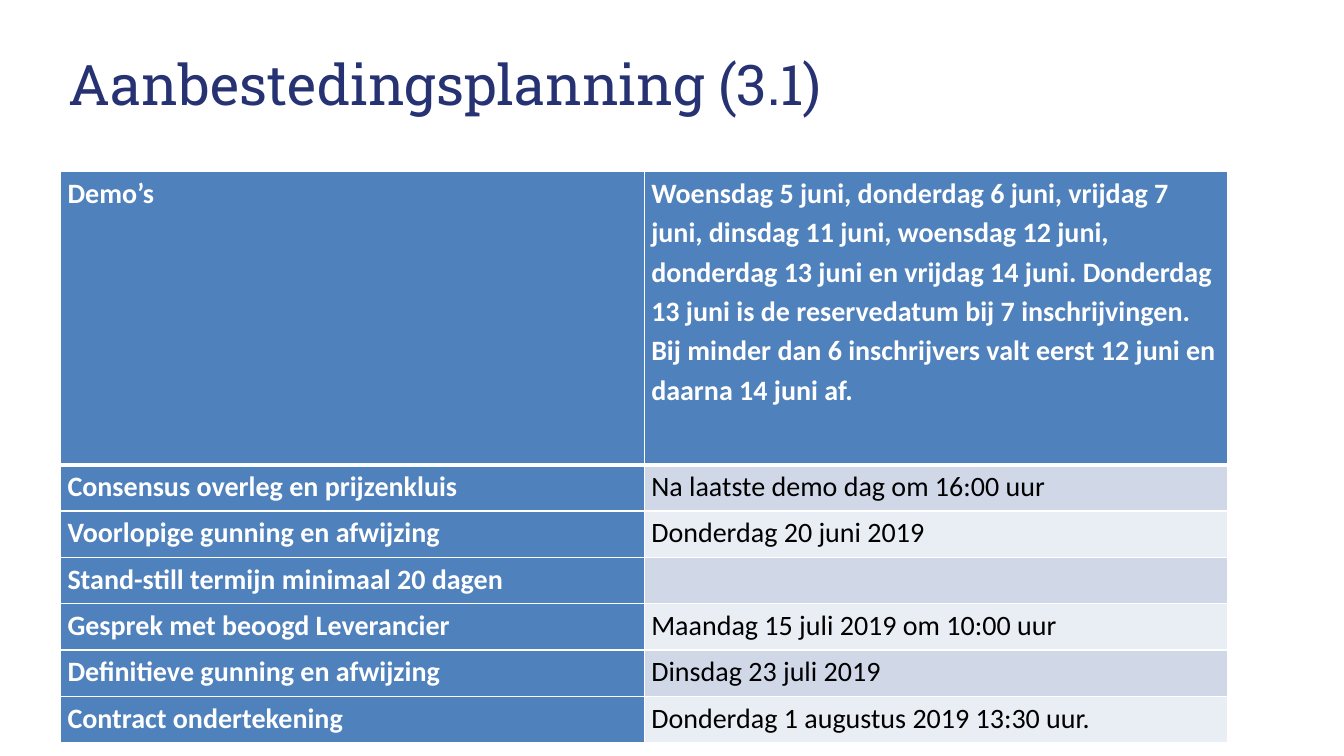
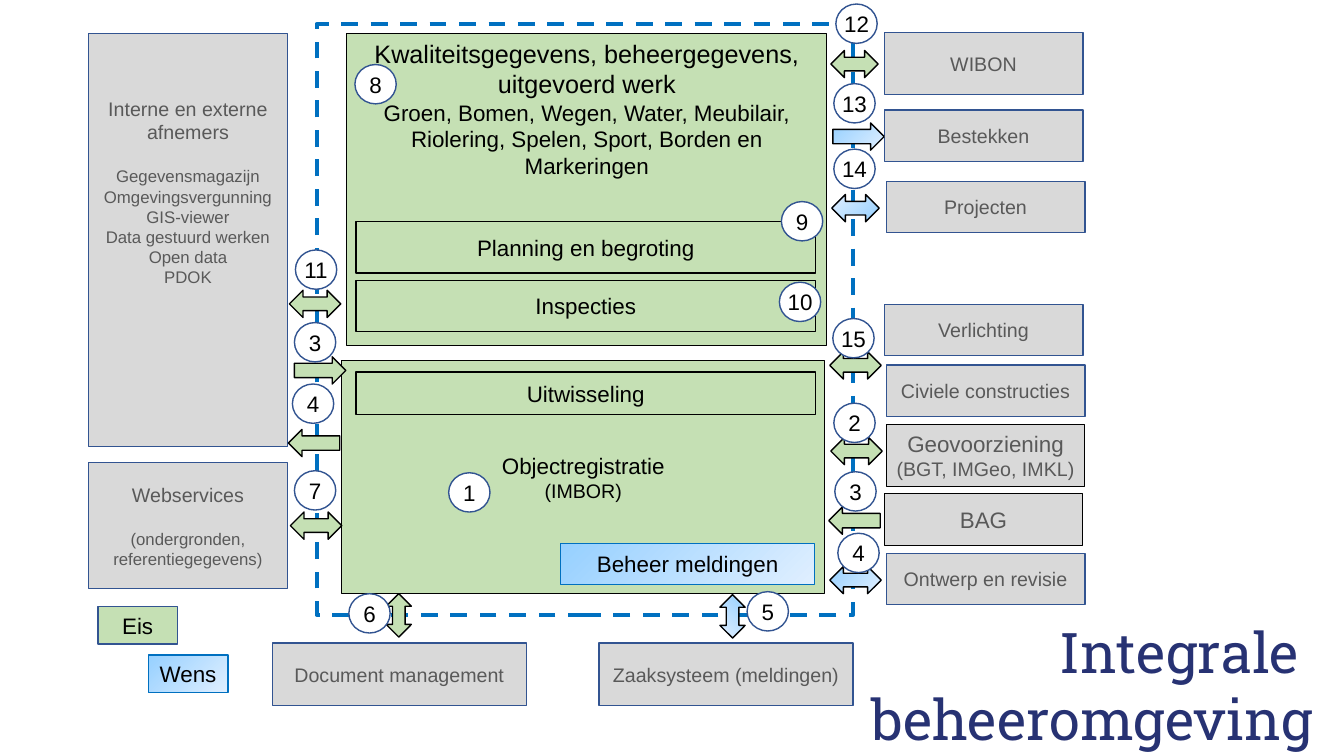
from lxml import etree
from pptx import Presentation
from pptx import util as u
from pptx.dml.color import RGBColor
from pptx.enum import dml, shapes, text
from pptx.oxml import ns

Inches, Pt = u.Inches, u.Pt
SHAPE = shapes.MSO_SHAPE
MIDDLE, TOP = text.MSO_ANCHOR.MIDDLE, text.MSO_ANCHOR.TOP
LEFT, CENTER, RIGHT = text.PP_ALIGN.LEFT, text.PP_ALIGN.CENTER, text.PP_ALIGN.RIGHT

NAVY = RGBColor(0x27, 0x32, 0x73)
BLACK = RGBColor(0, 0, 0)
WHITE = RGBColor(0xFF, 0xFF, 0xFF)
GREEN = RGBColor(0xC5, 0xE0, 0xB4)
GREY = RGBColor(0xD9, 0xD9, 0xD9)
DARK_GREY = RGBColor(0x59, 0x59, 0x59)
OUTLINE = RGBColor(0x32, 0x54, 0x91)
BLUE = RGBColor(0x00, 0x70, 0xC0)
SKY = (RGBColor(0x96, 0xD0, 0xFF), RGBColor(0xE0, 0xEF, 0xFF))
HEADER = RGBColor(0x4F, 0x81, 0xBD)
BANDS = (RGBColor(0xD0, 0xD8, 0xE8), RGBColor(0xE9, 0xED, 0xF4))

PLANNING = [
    ("Demo’s", "Woensdag 5 juni, donderdag 6 juni, vrijdag 7 juni, dinsdag 11 juni, "
     "woensdag 12 juni, donderdag 13 juni en vrijdag 14 juni. Donderdag 13 juni is de "
     "reservedatum bij 7 inschrijvingen. Bij minder dan 6 inschrijvers valt eerst "
     "12 juni en daarna 14 juni af."),
    ("Consensus overleg en prijzenkluis", "Na laatste demo dag om 16:00 uur"),
    ("Voorlopige gunning en afwijzing", "Donderdag 20 juni 2019"),
    ("Stand-still termijn minimaal 20 dagen", ""),
    ("Gesprek met beoogd Leverancier", "Maandag 15 juli 2019 om 10:00 uur"),
    ("Definitieve gunning en afwijzing", "Dinsdag 23 juli 2019"),
    ("Contract ondertekening", "Donderdag 1 augustus 2019 13:30 uur."),
]


# Shared helpers
def write(para, words, size=14, font="Arial", color=BLACK, bold=False, align=CENTER,
          before=0, spacing=None):
    para.alignment = align
    para.space_before = Pt(before)
    if spacing:
        para.line_spacing = spacing
    para.text = words
    para.font.size = Pt(size)
    para.font.name = font
    para.font.bold = bold
    para.font.color.rgb = color


def write_lines(frame, lines, color):
    """Each line is (words, size) or (words, size, space before)."""
    for index, (words, size, *before) in enumerate(lines):
        para = frame.paragraphs[0] if index == 0 else frame.add_paragraph()
        write(para, words, size=size, color=color, before=before[0] if before else 0)


def add_figure(page, kind, box, fill=None, line=BLACK, width=1):
    figure = page.shapes.add_shape(kind, *map(Inches, box))
    figure.shadow.inherit = False
    if fill is None:
        figure.fill.background()
    elif fill is SKY:
        figure.fill.gradient()
        figure.fill.gradient_angle = 315
        for stop, color in zip(figure.fill.gradient_stops, SKY):
            stop.color.rgb = color
    else:
        figure.fill.solid()
        figure.fill.fore_color.rgb = fill
    figure.line.color.rgb = line
    figure.line.width = Pt(width)
    return figure


def add_block(page, box, lines, fill=GREEN, line=BLACK, width=1, color=BLACK,
              anchor=MIDDLE, bottom=0.05):
    block = add_figure(page, SHAPE.RECTANGLE, box, fill, line, width)
    frame = block.text_frame
    frame.word_wrap = True
    frame.vertical_anchor = anchor
    frame.margin_bottom = Inches(bottom)
    write_lines(frame, lines, color)


def add_system(page, box, lines, line=OUTLINE, width=1, bottom=0.05):
    add_block(page, box, lines, GREY, line, width, DARK_GREY, bottom=bottom)


def add_badge(page, left, top, number):
    badge = add_figure(page, SHAPE.OVAL, (left, top, 0.41, 0.39), WHITE, OUTLINE)
    frame = badge.text_frame
    frame.word_wrap = False
    frame.margin_left = frame.margin_right = frame.margin_top = frame.margin_bottom = 0
    frame.vertical_anchor = MIDDLE
    write(frame.paragraphs[0], str(number), size=16)


def add_arrow(page, box, fill=GREEN, kind=SHAPE.LEFT_RIGHT_ARROW, turn=0):
    arrow = add_figure(page, kind, box, fill)
    arrow.rotation = turn
    if kind == SHAPE.RIGHT_ARROW:
        arrow.adjustments[0] = 0.53


def add_title(page, box, words, align=LEFT):
    frame = page.shapes.add_textbox(*map(Inches, box)).text_frame
    frame.word_wrap = True
    write(frame.paragraphs[0], words, size=40, font="Roboto Slab", color=NAVY, align=align)


# Planning table
def set_borders(cell, bottom):
    properties = cell._tc.get_or_add_tcPr()
    for index, side in enumerate("LRTB"):
        points = bottom if side == "B" else 1
        edge = etree.Element(ns.qn("a:ln" + side), w=str(Pt(points)))
        fill = etree.SubElement(edge, ns.qn("a:solidFill"))
        etree.SubElement(fill, ns.qn("a:srgbClr"), val=str(WHITE))
        properties.insert(index, edge)


def add_planning(page, box):
    left, top, width, height = box
    row_height = 0.46
    table = page.shapes.add_table(len(PLANNING), 2, *map(Inches, box)).table
    for column in table.columns:
        column.width = Inches(width / 2)
    for row_index, row in enumerate(PLANNING):
        table.rows[row_index].height = Inches(
            row_height if row_index else height - row_height * (len(PLANNING) - 1))
        for column_index, words in enumerate(row):
            cell = table.cell(row_index, column_index)
            heading = row_index == 0 or column_index == 0
            cell.margin_left = cell.margin_right = Inches(0.07)
            cell.margin_top = cell.margin_bottom = 0
            cell.fill.solid()
            cell.fill.fore_color.rgb = HEADER if heading else BANDS[(row_index - 1) % 2]
            write(cell.text_frame.paragraphs[0], words, size=20, font="Calibri",
                  color=WHITE if heading else BLACK, bold=heading, align=LEFT, spacing=1.15)
            set_borders(cell, bottom=1 if row_index else 3)


# Diagram regions
def add_core(page, box):
    left, top, width, height = box
    frame = add_figure(page, SHAPE.RECTANGLE, box, line=BLUE, width=3)
    frame.line.dash_style = dml.MSO_LINE.DASH

    add_block(page, (left + 0.25, top + 3.34, 4.79, 2.31),
              [("Objectregistratie", 16), ("(IMBOR)", 14)], width=0.75)
    add_block(page, (left + 0.3, top + 0.09, 4.76, 3.1),
              [("Kwaliteitsgegevens, beheergegevens, uitgevoerd werk", 18),
               ("Groen, Bomen, Wegen, Water, Meubilair, Riolering, Spelen, Sport, "
                "Borden en Markeringen", 16)], width=0.75, anchor=TOP)
    for words, down, tall in [("Planning en begroting", 1.96, 0.51),
                              ("Inspecties", 2.54, 0.51), ("Uitwisseling", 3.45, 0.42)]:
        add_block(page, (left + 0.39, top + down, 4.56, tall), [(words, 16)])
    add_block(page, (left + 2.42, top + 5.15, 2.52, 0.41), [("Beheer meldingen", 16)],
              SKY, BLUE)
    for number, across, down in [(1, 1.31, 4.45), (8, 0.38, 0.4), (9, 4.61, 1.76),
                                 (10, 4.59, 2.56)]:
        add_badge(page, left + across, top + down, number)


def add_users(page, box):
    left, top, width, height = box
    names = ["Omgevingsvergunning", "GIS-viewer", "Data gestuurd werken", "Open data", "PDOK"]
    add_system(page, (left, top, width, 4.1),
               [("Interne en externe afnemers", 14), ("Gegevensmagazijn", 12, 16)]
               + [(name, 12) for name in names], bottom=1)
    add_system(page, (left, top + height - 1.25, width, 1.25),
               [("Webservices", 14), ("(ondergronden, referentiegegevens)", 12, 16)])


def add_neighbours(page, box):
    left, top, width, height = box
    for words, across, down, tall in [
            ("WIBON", 0, 0, 0.62), ("Bestekken", 0, 0.77, 0.51),
            ("Projecten", 0.02, 1.48, 0.51), ("Verlichting", 0, 2.7, 0.51),
            ("Civiele constructies", 0.02, 3.3, 0.51),
            ("Ontwerp en revisie", 0.02, height - 0.51, 0.51)]:
        add_system(page, (left + across, top + down, width, tall), [(words, 14)])
    add_system(page, (left + 0.02, top + 3.89, width, 0.62),
               [("Geovoorziening", 16), ("(BGT, IMGeo, IMKL)", 14)], BLACK, 0.75)
    add_system(page, (left, top + 4.58, width, 0.51), [("BAG", 16)], BLACK, 0.75)


def add_support(page, box):
    left, top, width, height = box
    for index, words in enumerate(["Document management", "Zaaksysteem (meldingen)"]):
        add_system(page, (left + index * (width - 2.52), top, 2.52, height), [(words, 14)])


def add_legend(page, box):
    left, top, width, height = box
    add_block(page, (left, top, 0.79, 0.37), [("Eis", 16)], line=OUTLINE)
    add_block(page, (left + width - 0.79, top + height - 0.37, 0.79, 0.37), [("Wens", 16)],
              SKY, BLUE)


def add_links(page, left, top, links):
    """Each link is number, badge x and y, arrow x, y, width, height, then arrow format."""
    for number, badge_x, badge_y, x, y, width, height, look in links:
        add_arrow(page, (left + x, top + y, width, height), **look)
        add_badge(page, left + badge_x, top + badge_y, number)


TO_RIGHT = {"kind": SHAPE.RIGHT_ARROW}
TO_LEFT = {"kind": SHAPE.RIGHT_ARROW, "turn": 180}
LEFT_LINKS = [
    (11, 0.07, 0, 0.01, 0.4, 0.51, 0.27, {}),
    (3, 0.06, 0.72, 0.06, 1.06, 0.51, 0.27, TO_RIGHT),
    (4, 0.04, 1.33, 0, 1.78, 0.51, 0.27, TO_LEFT),
    (7, 0.06, 2.19, 0.02, 2.6, 0.51, 0.27, {}),
]
RIGHT_LINKS = [
    (12, 0.07, 0, 0.02, 0.46, 0.47, 0.27, {"turn": 180}),
    (13, 0.05, 0.79, 0.04, 1.18, 0.51, 0.27, {"fill": SKY, **TO_RIGHT}),
    (14, 0.05, 1.44, 0.03, 1.89, 0.47, 0.27, {"fill": SKY, "turn": 180}),
    (15, 0.04, 3.12, 0.01, 3.45, 0.51, 0.27, {}),
    (2, 0.05, 3.96, 0.02, 4.3, 0.51, 0.27, {}),
    (3, 0.06, 4.64, 0, 4.99, 0.51, 0.27, TO_LEFT),
    (4, 0.09, 5.25, 0.01, 5.58, 0.51, 0.27, {"fill": SKY}),
]
BOTTOM_LINKS = [
    (6, 0, 0.02, 0.28, 0.11, 0.43, 0.25, {"turn": 90}),
    (5, 3.95, 0, 3.59, 0.12, 0.43, 0.25, {"fill": SKY, "turn": 90}),
]


# Slides
def build_planning(page):
    add_title(page, (0.58, 0.44, 10.5, 0.79), "Aanbestedingsplanning (3.1)")
    add_planning(page, (0.6, 1.7, 11.58, 5.67))


def build_environment(page):
    add_core(page, (3.14, 0.24, 5.32, 5.86))
    add_users(page, (0.88, 0.33, 1.97, 5.51))
    add_neighbours(page, (8.77, 0.32, 1.97, 5.68))
    add_support(page, (2.7, 6.38, 5.76, 0.62))
    add_legend(page, (0.97, 6.02, 1.29, 0.85))
    add_links(page, 2.86, 2.48, LEFT_LINKS)
    add_links(page, 8.22, 0.04, RIGHT_LINKS)
    add_links(page, 3.46, 5.87, BOTTOM_LINKS)
    add_title(page, (8.33, 6.08, 4.79, 0.79), "Integrale \vbeheeromgeving", RIGHT)


def main():
    deck = Presentation()
    deck.slide_width, deck.slide_height = Inches(13.33), Inches(7.5)
    for build in (build_planning, build_environment):
        build(deck.slides.add_slide(deck.slide_layouts[6]))
    deck.save("out.pptx")


if __name__ == "__main__":
    main()
